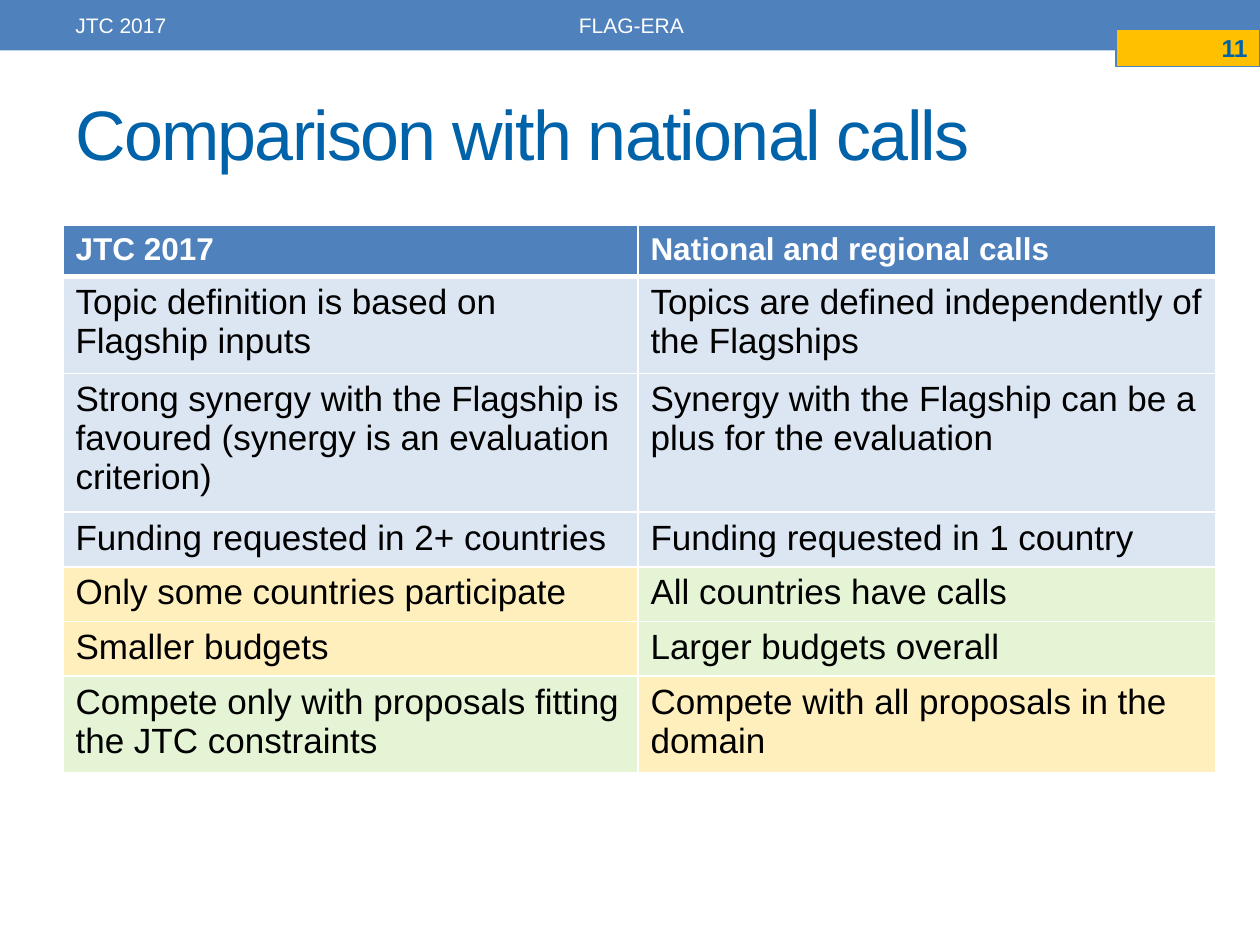
import pptx
import pptx.dml.color
import pptx.enum.shapes
import pptx.enum.text
import pptx.oxml.ns
import pptx.util
from lxml import etree

Cm, Pt = pptx.util.Cm, pptx.util.Pt
RGBColor = pptx.dml.color.RGBColor
ALIGN = pptx.enum.text.PP_ALIGN
MIDDLE = pptx.enum.text.MSO_ANCHOR.MIDDLE
RECTANGLE = pptx.enum.shapes.MSO_SHAPE.RECTANGLE

WHITE = RGBColor(0xFF, 0xFF, 0xFF)
BLACK = RGBColor(0, 0, 0)
BLUE = RGBColor(0x4F, 0x81, 0xBD)
DEEP_BLUE = RGBColor(0x00, 0x62, 0xA9)
AMBER = RGBColor(0xFF, 0xC0, 0x00)
NEUTRAL = RGBColor(0xDC, 0xE6, 0xF2)
DRAWBACK = RGBColor(0xFF, 0xEF, 0xBD)
ADVANTAGE = RGBColor(0xE5, 0xF4, 0xD4)

TITLE = "Comparison with national calls"
EVENT, PROJECT, PAGE = "JTC 2017", "FLAG-ERA", "11"
HEADINGS = ("JTC 2017", "National and regional calls")
# Each row: left text, right text, left fill, right fill
COMPARISON = [
    ("Topic definition is based on Flagship inputs",
     "Topics are defined independently of the Flagships", NEUTRAL, NEUTRAL),
    ("Strong synergy with the Flagship is favoured (synergy is an evaluation criterion)",
     "Synergy with the Flagship can be a plus for the evaluation", NEUTRAL, NEUTRAL),
    ("Funding requested in 2+ countries",
     "Funding requested in 1 country", NEUTRAL, NEUTRAL),
    ("Only some countries participate",
     "All countries have calls", DRAWBACK, ADVANTAGE),
    ("Smaller budgets", "Larger budgets overall", DRAWBACK, ADVANTAGE),
    ("Compete only with proposals fitting the JTC constraints",
     "Compete with all proposals in the domain", ADVANTAGE, DRAWBACK),
]

MARGIN = Cm(1.27)
COLUMN_WIDTHS = (Cm(11.59), Cm(11.64))
ROW_HEIGHT = Cm(1.03)


def write(frame, text, size, color, bold=False, align=ALIGN.LEFT):
    frame.text = text
    frame.word_wrap = True
    paragraph = frame.paragraphs[0]
    paragraph.alignment = align
    font = paragraph.runs[0].font
    font.name, font.size, font.bold = "Arial", Pt(size), bold
    font.color.rgb = color


def add_label(slide, box, text, size, color, align=ALIGN.LEFT):
    label = slide.shapes.add_textbox(*box)
    write(label.text_frame, text, size, color, align=align)
    label.text_frame.vertical_anchor = MIDDLE
    return label


def add_rectangle(slide, box, fill):
    rectangle = slide.shapes.add_shape(RECTANGLE, *box)
    rectangle.shadow.inherit = False
    rectangle.fill.solid()
    rectangle.fill.fore_color.rgb = fill
    rectangle.line.fill.background()
    return rectangle


def set_borders(cell, top, bottom):
    """Draw white cell borders, with top and bottom widths in points."""
    qn = pptx.oxml.ns.qn
    properties = cell._tc.get_or_add_tcPr()
    for side, width in (("L", 1), ("R", 1), ("T", top), ("B", bottom)):
        line = etree.SubElement(properties, qn("a:ln" + side), w=str(Pt(width)))
        fill = etree.SubElement(line, qn("a:solidFill"))
        etree.SubElement(fill, qn("a:srgbClr"), val=str(WHITE))


def add_comparison(slide):
    rows = [(*HEADINGS, BLUE, BLUE)] + COMPARISON
    table = slide.shapes.add_table(
        len(rows), len(HEADINGS), MARGIN, Cm(4.55),
        sum(COLUMN_WIDTHS), ROW_HEIGHT * len(rows)).table
    for column, width in zip(table.columns, COLUMN_WIDTHS):
        column.width = width
    for r, (left, right, left_fill, right_fill) in enumerate(rows):
        table.rows[r].height = ROW_HEIGHT
        for c, (text, fill) in enumerate(((left, left_fill), (right, right_fill))):
            cell = table.cell(r, c)
            set_borders(cell, top=3 if r == 1 else 1, bottom=3 if r == 0 else 1)
            cell.fill.solid()
            cell.fill.fore_color.rgb = fill
            if r == 0:
                write(cell.text_frame, text, 18, WHITE, bold=True)
            else:
                write(cell.text_frame, text, 20, BLACK)


def main():
    deck = pptx.Presentation()
    deck.slide_width, deck.slide_height = Cm(25.4), Cm(19.05)
    slide = deck.slides.add_slide(deck.slide_layouts[6])

    add_rectangle(slide, (0, 0, deck.slide_width, Cm(1.02)), BLUE)
    title = add_label(slide, (MARGIN, Cm(1.73), Cm(22.86), Cm(1.9)), TITLE, 40, DEEP_BLUE)
    title.text_frame.paragraphs[0].runs[0].font._element.set("spc", "-100")
    add_label(slide, (MARGIN, Cm(0.05), Cm(3.02), Cm(0.91)), EVENT, 12, WHITE)
    add_label(slide, (Cm(4.5), Cm(0.05), Cm(16.46), Cm(0.91)), PROJECT, 12, WHITE, ALIGN.CENTER)

    page = add_rectangle(slide, (Cm(22.5), Cm(0.6), Cm(2.9), Cm(0.74)), AMBER)
    page.line.color.rgb = BLUE
    page.line.width = Pt(0.75)
    write(page.text_frame, PAGE, 14, DEEP_BLUE, bold=True, align=ALIGN.RIGHT)
    page.text_frame.vertical_anchor = MIDDLE

    add_comparison(slide)
    deck.save("out.pptx")


if __name__ == "__main__":
    main()
